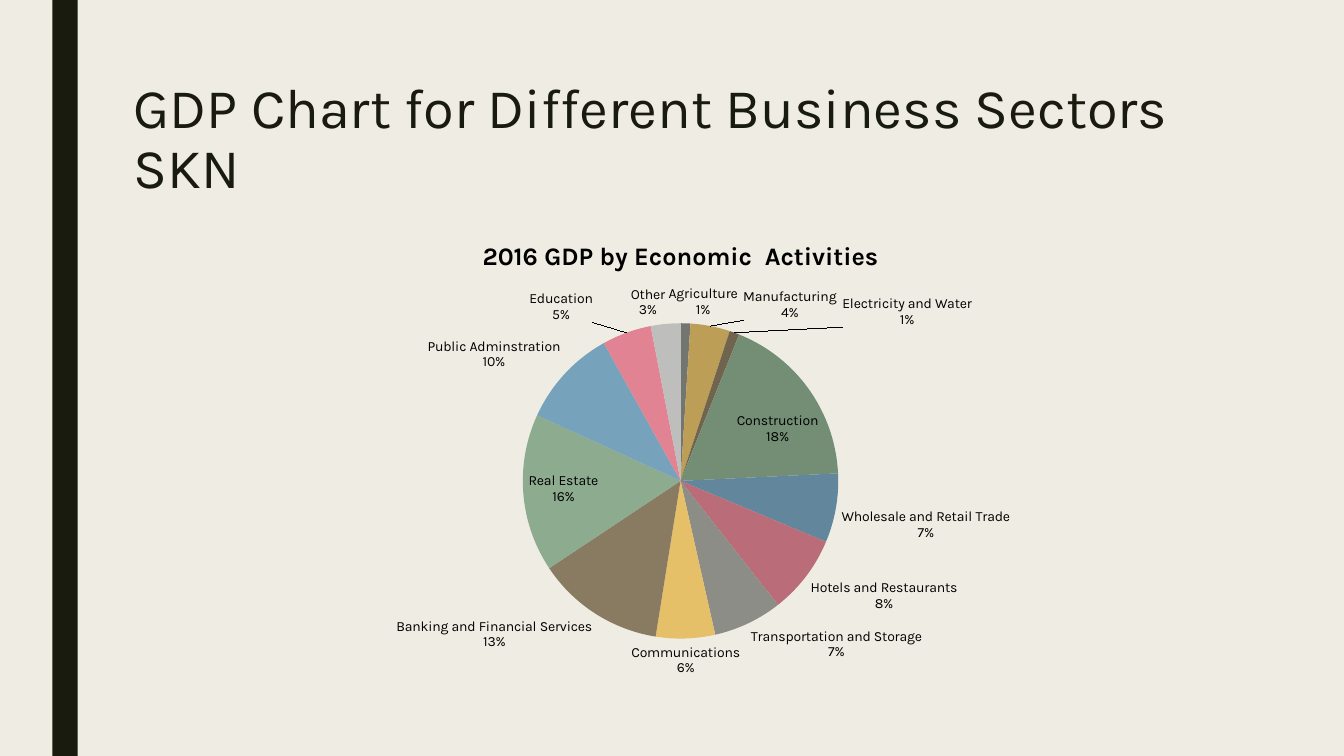
from lxml import etree
from pptx import Presentation
from pptx.chart.data import CategoryChartData
from pptx.dml.color import RGBColor
from pptx.enum.chart import XL_CHART_TYPE, XL_LABEL_POSITION
from pptx.enum.shapes import MSO_SHAPE
from pptx.enum.text import MSO_ANCHOR
from pptx.oxml.ns import qn
from pptx.util import Inches, Pt

PIE = XL_CHART_TYPE.PIE
BEST = XL_LABEL_POSITION.BEST_FIT
RECT = MSO_SHAPE.RECTANGLE
TOP = MSO_ANCHOR.TOP
FONT = "Karla"
COLORS = {"back": "EFEDE3", "dark": "191B0E", "text": "000000"}
SECTORS = [
    ("Agriculture", 1, "737570"),
    ("Manufacturing", 4, "BD9E57"),
    ("Electricity and Water", 1, "70644F"),
    ("Construction", 18, "748E75"),
    ("Wholesale and Retail Trade", 7, "62869B"),
    ("Hotels and Restaurants", 8, "BA6C79"),
    ("Transportation and Storage", 7, "8C8D86"),
    ("Communications", 6, "E6C069"),
    ("Banking and Financial Services", 13, "897B61"),
    ("Real Estate", 16, "8DAB8E"),
    ("Public Adminstration", 10, "77A2BB"),
    ("Education", 5, "E28394"),
    ("Other", 3, "BEBEBC"),
]
SHIFTS = {1: (0.03, 0), 2: (0.1, 0), 11: (-0.03, -0.01)}


def paint(fill, color):
    """Give a fill one solid colour."""
    fill.solid()
    fill.fore_color.rgb = RGBColor.from_string(color)


def style(font, size, color, bold=False):
    """Set the face, size, weight and colour of a font."""
    font.name, font.size, font.bold = FONT, Pt(size), bold
    font.color.rgb = RGBColor.from_string(color)


def add_bar(slide):
    """Draw the dark upright bar on the left."""
    bar = slide.shapes.add_shape(RECT, Inches(0.52), 0, Inches(0.25), Inches(7.5))
    bar.shadow.inherit = False
    paint(bar.fill, COLORS["dark"])
    bar.line.fill.background()


def add_title(slide, text):
    """Write the slide title."""
    box = slide.shapes.add_textbox(Inches(1.23), Inches(0.75), Inches(11.14), Inches(1.62))
    frame = box.text_frame
    frame.word_wrap = True
    frame.vertical_anchor = TOP
    para = frame.paragraphs[0]
    para.text = text
    para.line_spacing = 0.89
    style(para.font, 40, COLORS["dark"])


def make_layout(**values):
    """Build a manual chart layout from named values."""
    layout = etree.Element(qn("c:layout"))
    manual = etree.SubElement(layout, qn("c:manualLayout"))
    for name, value in values.items():
        etree.SubElement(manual, qn(f"c:{name}")).set("val", str(value))
    return layout


def set_flags(node):
    """Show only the category name and the percentage."""
    for name in ("LegendKey", "Val", "CatName", "SerName", "Percent", "BubbleSize"):
        flag = node.find(qn(f"c:show{name}"))
        if flag is not None:
            flag.set("val", "1" if name in ("CatName", "Percent") else "0")


def add_labels(plot, series):
    """Label the slices and move those that need a leader line."""
    labels = series.data_labels
    labels.show_category_name = labels.show_percentage = True
    labels.show_value = False
    labels.show_leader_lines = True
    labels.position = BEST
    style(labels.font, 10, COLORS["text"])
    for index, (x, y) in SHIFTS.items():
        label = series.points[index].data_label
        style(label.font, 10, COLORS["text"])
        label.position = BEST
    for node in series._element.iter(qn("c:dLbl")):
        x, y = SHIFTS[int(node.find(qn("c:idx")).get("val"))]
        node.insert(1, make_layout(x=x, y=y))
        set_flags(node)
    group = labels._element
    lead = group.find(qn("c:showLeaderLines"))
    if lead is None:
        lead = etree.SubElement(group, qn("c:showLeaderLines"))
    lead.set("val", "1")


def add_pie(slide, title):
    """Add the pie chart of sector shares."""
    data = CategoryChartData()
    data.categories = [name for name, _, _ in SECTORS]
    data.add_series("Series 1", [share for _, share, _ in SECTORS])
    chart = slide.shapes.add_chart(
        PIE, Inches(1.5), Inches(2.18), Inches(10.5), Inches(4.67), data).chart
    style(chart.font, 10, COLORS["text"])
    chart.has_legend = False
    chart.has_title = True
    head = chart.chart_title.text_frame.paragraphs[0]
    head.text = title
    style(head.font, 18, COLORS["text"], True)
    plot = chart.plots[0]
    plot.vary_by_categories = True
    series = plot.series[0]
    for index, (_, _, color) in enumerate(SECTORS):
        form = series.points[index].format
        paint(form.fill, color)
        form.line.fill.background()
    add_labels(plot, series)
    area = chart._chartSpace.find(".//" + qn("c:plotArea"))
    old = area.find(qn("c:layout"))
    if old is not None:
        area.remove(old)
    area.insert(0, make_layout(layoutTarget="inner", xMode="edge", yMode="edge",
                               x=0.35, y=0.22, w=0.3, h=0.67))


def main():
    """Build and save the slide."""
    deck = Presentation()
    deck.slide_width, deck.slide_height = Inches(13.33), Inches(7.5)
    slide = deck.slides.add_slide(deck.slide_layouts[6])
    paint(slide.background.fill, COLORS["back"])
    add_bar(slide)
    add_title(slide, "GDP Chart for Different Business Sectors SKN")
    add_pie(slide, "2016 GDP by Economic  Activities")
    deck.save("out.pptx")


if __name__ == "__main__":
    main()
